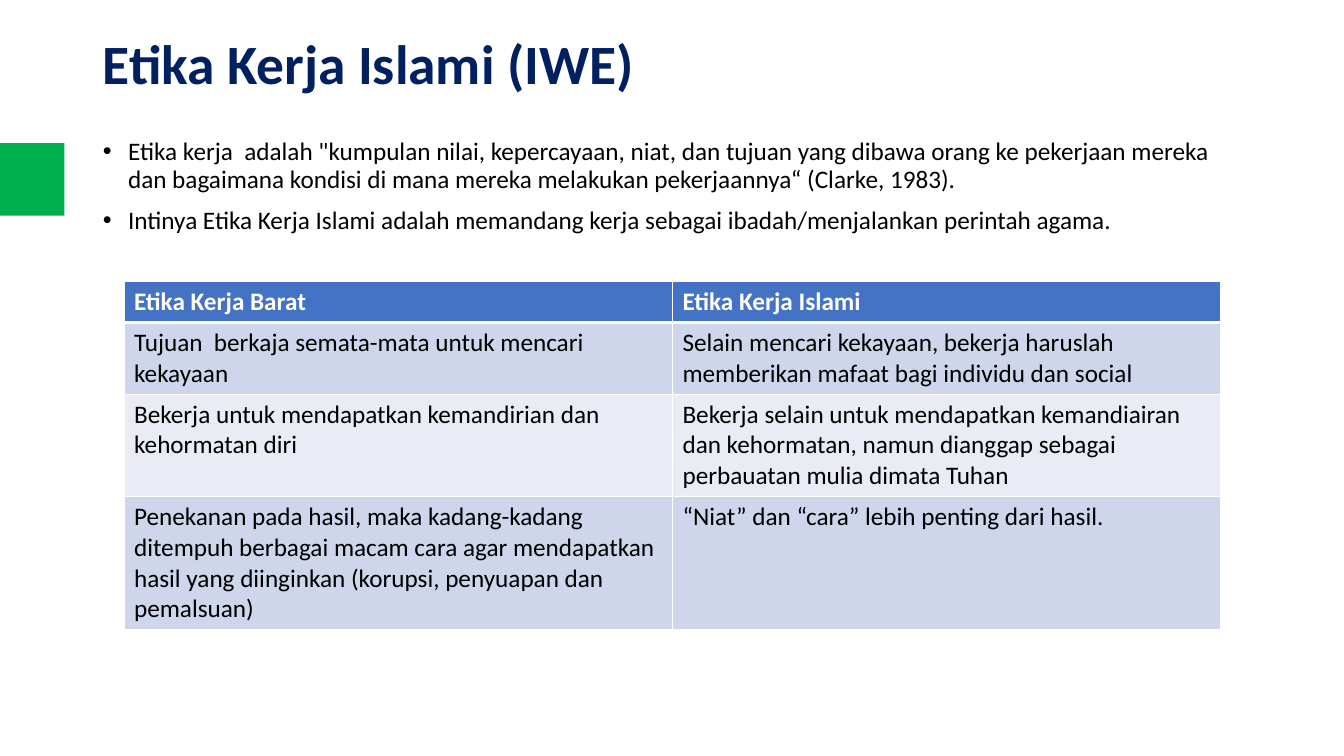
from lxml.etree import SubElement
from pptx import Presentation
from pptx.dml.color import RGBColor
from pptx.enum.shapes import MSO_SHAPE
from pptx.enum.text import MSO_ANCHOR, MSO_AUTO_SIZE, PP_ALIGN
from pptx.oxml.ns import qn
from pptx.util import Inches, Pt

# Content
TITLE = "Etika Kerja Islami (IWE)"
POINTS = [
    "Etika kerja  adalah \"kumpulan nilai, kepercayaan, niat, dan tujuan yang dibawa orang ke "
    "pekerjaan mereka dan bagaimana kondisi di mana mereka melakukan pekerjaannya“ (Clarke, 1983).",
    "Intinya Etika Kerja Islami adalah memandang kerja sebagai ibadah/menjalankan perintah agama.",
]
COMPARISON = [
    ("Etika Kerja Barat", "Etika Kerja Islami"),
    ("Tujuan  berkaja semata-mata untuk mencari kekayaan",
     "Selain mencari kekayaan, bekerja haruslah memberikan mafaat bagi individu dan social"),
    ("Bekerja untuk mendapatkan kemandirian dan kehormatan diri",
     "Bekerja selain untuk mendapatkan kemandiairan dan kehormatan, namun dianggap sebagai "
     "perbauatan mulia dimata Tuhan"),
    ("Penekanan pada hasil, maka kadang-kadang ditempuh berbagai macam cara agar mendapatkan "
     "hasil yang diinginkan (korupsi, penyuapan dan pemalsuan)",
     "“Niat” dan “cara” lebih penting dari hasil."),
]
ROW_HEIGHTS = [0.41, 0.7, 1.01, 1.31]
COLUMN_WIDTH = 5.44

FONT = "Calibri"
GREEN = RGBColor(0x00, 0xB0, 0x50)
NAVY = RGBColor(0x00, 0x20, 0x60)
BLACK = RGBColor(0x00, 0x00, 0x00)
WHITE = RGBColor(0xFF, 0xFF, 0xFF)
HEADER_BLUE = RGBColor(0x44, 0x72, 0xC4)
BANDS = [RGBColor(0xE9, 0xEB, 0xF5), RGBColor(0xCF, 0xD5, 0xEA)]


def place(shape, left, top, width, height):
    shape.left, shape.top = Inches(left), Inches(top)
    shape.width, shape.height = Inches(width), Inches(height)


def add_text(paragraph, text, size, color, bold=False):
    run = paragraph.add_run()
    run.text = text
    run.font.name = FONT
    run.font.size = Pt(size)
    run.font.bold = bold
    run.font.color.rgb = color


def add_bullet(paragraph):
    properties = paragraph._p.get_or_add_pPr()
    properties.set("marL", str(Inches(0.25)))
    properties.set("indent", str(-Inches(0.25)))
    SubElement(properties, qn("a:buFont"), typeface="Arial")
    SubElement(properties, qn("a:buChar"), char="•")


def add_border(cell, side, width):
    line = SubElement(cell._tc.get_or_add_tcPr(), qn(f"a:{side}"), w=str(Pt(width)))
    fill = SubElement(line, qn("a:solidFill"))
    SubElement(fill, qn("a:srgbClr"), val=str(WHITE))


def main():
    presentation = Presentation()
    presentation.slide_width = Inches(13.33)
    presentation.slide_height = Inches(7.5)
    slide = presentation.slides.add_slide(presentation.slide_layouts[1])

    # Green marker at the left edge
    marker = slide.shapes.add_shape(
        MSO_SHAPE.RECTANGLE, Inches(0), Inches(1.42), Inches(0.64), Inches(0.72))
    marker.shadow.inherit = False
    marker.fill.solid()
    marker.fill.fore_color.rgb = GREEN
    marker.line.fill.background()

    # Title
    title = slide.shapes.title
    place(title, 0.92, 0.4, 11.5, 0.52)
    title.text_frame.auto_size = MSO_AUTO_SIZE.NONE
    title.text_frame.vertical_anchor = MSO_ANCHOR.MIDDLE
    heading = title.text_frame.paragraphs[0]
    heading.alignment = PP_ALIGN.LEFT
    heading.line_spacing = 0.9
    add_text(heading, TITLE, 39.6, NAVY, bold=True)

    # Bulleted points
    body = slide.placeholders[1]
    place(body, 0.92, 1.33, 11.5, 5.62)
    frame = body.text_frame
    frame.auto_size = MSO_AUTO_SIZE.NONE
    for index, point in enumerate(POINTS):
        paragraph = frame.add_paragraph() if index else frame.paragraphs[0]
        paragraph.line_spacing = 0.9
        paragraph.space_before = Pt(10)
        add_bullet(paragraph)
        add_text(paragraph, point, 18, BLACK)

    # Comparison table
    columns = len(COMPARISON[0])
    table = slide.shapes.add_table(
        len(COMPARISON), columns, Inches(1.23), Inches(2.79),
        Inches(COLUMN_WIDTH * columns), Inches(sum(ROW_HEIGHTS))).table
    for column in table.columns:
        column.width = Inches(COLUMN_WIDTH)
    for row, texts in enumerate(COMPARISON):
        is_header = row == 0
        table.rows[row].height = Inches(ROW_HEIGHTS[row])
        for column, text in enumerate(texts):
            cell = table.cell(row, column)
            for side in ("lnL", "lnR", "lnT", "lnB"):
                heavy = (row, side) in ((0, "lnB"), (1, "lnT"))
                add_border(cell, side, 3 if heavy else 1)
            cell.fill.solid()
            cell.fill.fore_color.rgb = HEADER_BLUE if is_header else BANDS[row % 2]
            add_text(cell.text_frame.paragraphs[0], text, 18,
                     WHITE if is_header else BLACK, bold=is_header)

    presentation.save("out.pptx")


if __name__ == "__main__":
    main()
